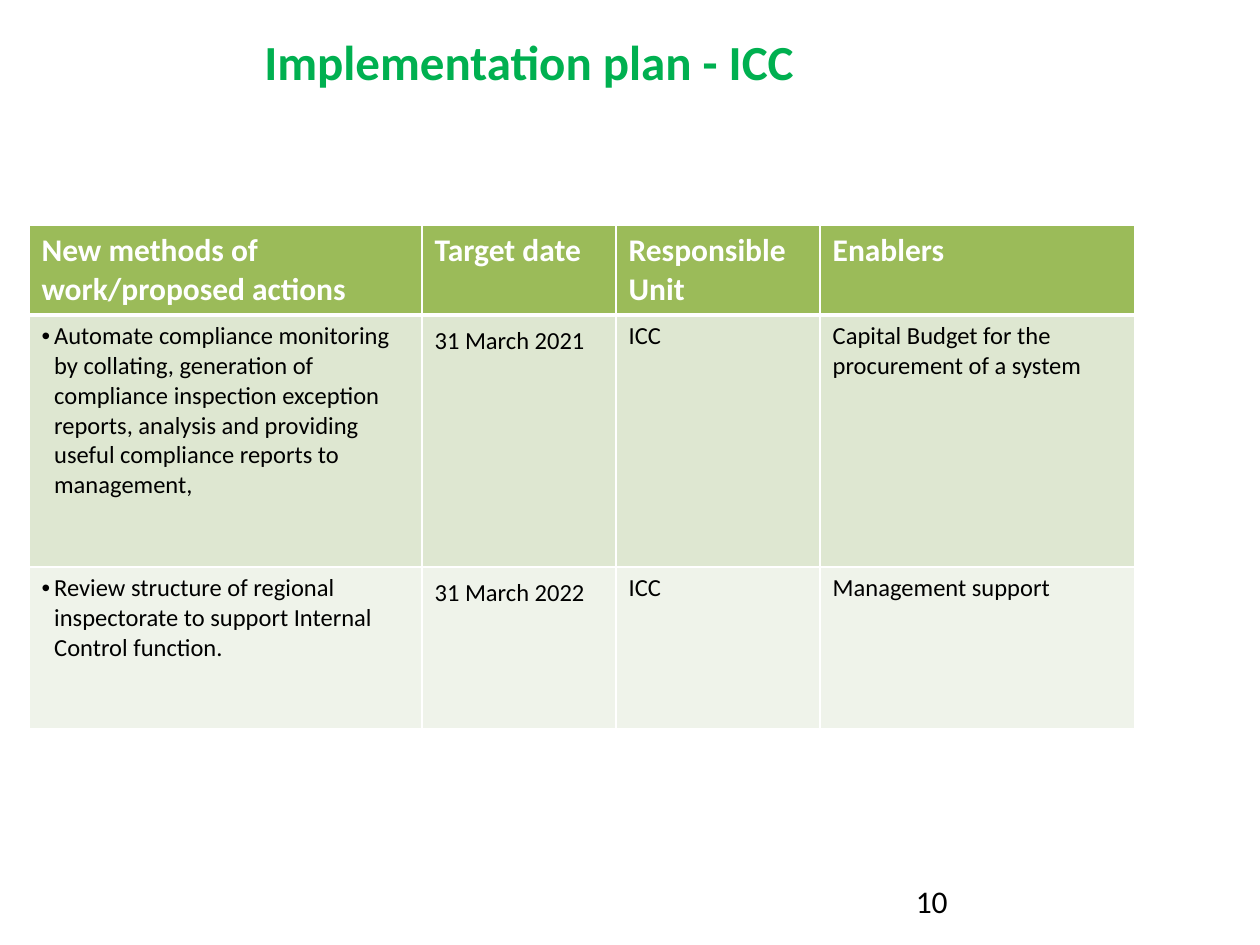
from lxml.etree import SubElement as Sub
from pptx import Presentation as Deck
from pptx.dml.color import RGBColor as RGB
from pptx.oxml.ns import qn
from pptx.util import Inches, Pt

HUES = {"white": "FFFFFF", "black": "000000", "title": "00B050",
        "head": "9BBB59", "odd": "DEE7D1", "even": "EFF3EA"}
COLS = [3.12, 1.54, 1.62, 2.5]
ROWS = [0.7, 2, 1.28]
CELLS = [
    ["New methods of work/proposed actions", "Target date",
     "Responsible Unit", "Enablers"],
    ["Automate compliance monitoring by collating, generation of compliance "
     "inspection exception reports, analysis and providing useful compliance "
     "reports to management,",
     "31 March 2021", "ICC", "Capital Budget for the procurement of a system"],
    ["Review structure of regional inspectorate to support Internal Control "
     "function.",
     "31 March 2022", "ICC", "Management support"],
]
BODY = [{"indent": 0.1, "bullet": True}, {"line": 1.15, "after": 10},
        {"after": 10}, {}]


def write(frame, text, size=14, hue="black", bold=False, indent=0,
          bullet=False, line=None, after=None):
    frame.word_wrap = True
    para = frame.paragraphs[0]
    para.text = text
    props = para._p.get_or_add_pPr()
    if indent:
        props.set("marL", str(Inches(indent)))
    if bullet:
        props.set("indent", str(-Inches(indent)))
        Sub(props, qn("a:buFont"), typeface="Arial")
        Sub(props, qn("a:buChar"), char="•")
    if line:
        para.line_spacing = line
    if after:
        para.space_after = Pt(after)
    font = para.runs[0].font
    font.name, font.size, font.bold = "Calibri", Pt(size), bold
    font.color.rgb = RGB.from_string(HUES[hue])


def add_text(slide, box, text, **style):
    shape = slide.shapes.add_textbox(*map(Inches, box))
    write(shape.text_frame, text, **style)


def edge(cell, top, base):
    props = cell._tc.get_or_add_tcPr()
    sides = {"lnL": 1, "lnR": 1, "lnT": top, "lnB": base}
    for spot, (side, width) in enumerate(sides.items()):
        line = Sub(props, qn("a:" + side), w=str(Pt(width)))
        fill = Sub(line, qn("a:solidFill"))
        Sub(fill, qn("a:srgbClr"), val=HUES["white"])
        props.insert(spot, line)


def add_plan(slide):
    box = map(Inches, (0.23, 1.79, sum(COLS), sum(ROWS)))
    table = slide.shapes.add_table(len(ROWS), len(COLS), *box).table
    for col, width in zip(table.columns, COLS):
        col.width = Inches(width)
    for row, height in zip(table.rows, ROWS):
        row.height = Inches(height)
    for r, texts in enumerate(CELLS):
        for c, text in enumerate(texts):
            cell = table.cell(r, c)
            cell.fill.solid()
            shade = ("head", "odd", "even")[r]
            cell.fill.fore_color.rgb = RGB.from_string(HUES[shade])
            edge(cell, 3 if r == 1 else 1, 3 if r == 0 else 1)
            head = {"size": 18, "hue": "white", "bold": True}
            write(cell.text_frame, text, **(BODY[c] if r else head))


def main():
    deck = Deck()
    deck.slide_width, deck.slide_height = Inches(10), Inches(7.5)
    slide = deck.slides.add_slide(deck.slide_layouts[6])
    add_plan(slide)
    add_text(slide, (0.5, 0.2, 9, 0.57), "Implementation plan - ICC",
             size=28, hue="title", bold=True, indent=1.5)
    add_text(slide, (7.17, 6.95, 2.33, 0.4), "10", size=18)
    deck.save("out.pptx")


if __name__ == "__main__":
    main()
